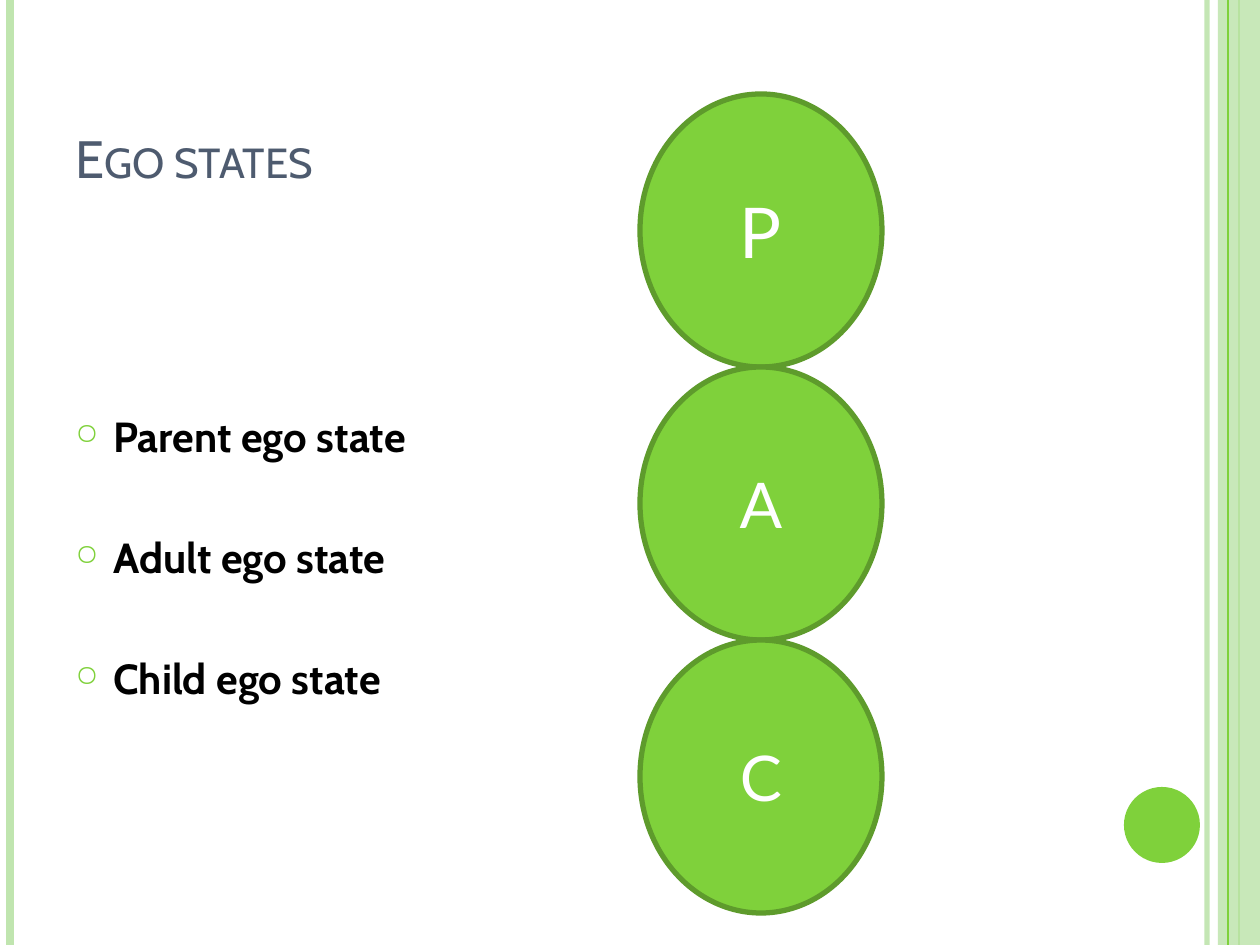
"""Build the ego states slide with its three stacked circles."""
from typing import NamedTuple, Optional

from lxml import etree
from pptx import Presentation
from pptx.dml.color import RGBColor
from pptx.enum.shapes import MSO_CONNECTOR, MSO_SHAPE
from pptx.enum.text import MSO_ANCHOR, PP_ALIGN
from pptx.oxml.ns import qn
from pptx.util import Pt

EMU_PER_PX = 914400 / 126
WIDTH, HEIGHT = 1260, 945
STRAIGHT = MSO_CONNECTOR.STRAIGHT
ELLIPSE, RECTANGLE = MSO_SHAPE.OVAL, MSO_SHAPE.RECTANGLE
TOP, MIDDLE, BOTTOM = MSO_ANCHOR.TOP, MSO_ANCHOR.MIDDLE, MSO_ANCHOR.BOTTOM
CENTER = PP_ALIGN.CENTER

GREEN, DARK_GREEN, PALE_GREEN = "7FD13B", "5E9B2C", "C0E5AF"
SLATE, BLACK, WHITE = "4E5B6F", "000000", "FFFFFF"
TITLE_FONT, CIRCLE_FONT = "Cabin", "Lato"


class Box(NamedTuple):
    """Left, top, width and height in px."""
    left: int
    top: int
    width: int
    height: int


class Stripe(NamedTuple):
    """A vertical line over the full slide height."""
    x: int
    color: str
    points: float
    opacity: int = 100


class EgoState(NamedTuple):
    """A circle letter, its size and the matching bullet."""
    letter: str
    size: int
    label: str


BACK_STRIPES = [
    Stripe(1207, PALE_GREEN, 3, 93),
    Stripe(10, PALE_GREEN, 4.5),
    Stripe(1239, GREEN, 1.5),
]
FRONT_STRIPE = Stripe(1228, GREEN, 0.75)
SIDE_BAND = Box(1218, 0, 42, HEIGHT)
CORNER_DOT = Box(1124, 787, 76, 76)
TITLE_BOX = Box(63, 38, 1029, 157)
BULLET_BOX = Box(63, 404, 560, 488)
FIRST_CIRCLE = Box(640, 94, 242, 273)
BULLET_INDENT = 38
BULLET_GAP = 40.5
EGO_STATES = [
    EgoState("P", 40, "Parent ego state"),
    EgoState("A", 36, "Adult ego state"),
    EgoState("C", 36, "Child ego state"),
]


def px(length: int) -> int:
    """Turn px into EMU."""
    return round(length * EMU_PER_PX)


def rgb(color: str) -> RGBColor:
    """Turn a hex string into a colour."""
    return RGBColor.from_string(color)


def set_opacity(properties, percent: int) -> None:
    """Set the opacity of the first colour in a shape's properties."""
    color = next(properties.iter(qn("a:srgbClr")))
    etree.SubElement(color, qn("a:alpha"), val=str(percent * 1000))


def add_stripe(slide, stripe: Stripe) -> None:
    """Draw a vertical line without a shadow."""
    x = px(stripe.x)
    connector = slide.shapes.add_connector(STRAIGHT, x, 0, x, px(HEIGHT))
    connector.line.color.rgb = rgb(stripe.color)
    connector.line.width = Pt(stripe.points)
    properties = connector._element.spPr
    if stripe.opacity < 100:
        set_opacity(properties, stripe.opacity)
    etree.SubElement(properties, qn("a:effectLst"))


def add_filled(slide, kind, box: Box, fill: str, line: Optional[str] = None):
    """Draw a filled shape, outlined when a line colour is given."""
    shape = slide.shapes.add_shape(kind, *map(px, box))
    shape.shadow.inherit = False
    shape.fill.solid()
    shape.fill.fore_color.rgb = rgb(fill)
    if line:
        shape.line.color.rgb = rgb(line)
        shape.line.width = Pt(3)
    else:
        shape.line.fill.background()
    return shape


def add_run(paragraph, text: str, size: int, font: str, color: str, bold: bool = False):
    """Add one formatted run."""
    run = paragraph.add_run()
    run.text = text
    run.font.size = Pt(size)
    run.font.name = font
    run.font.bold = bold
    run.font.color.rgb = rgb(color)
    return run


def add_text_frame(slide, box: Box, anchor):
    """Add a wrapping text box and return its frame."""
    frame = slide.shapes.add_textbox(*map(px, box)).text_frame
    frame.word_wrap = True
    frame.vertical_anchor = anchor
    return frame


def set_bullet(paragraph) -> None:
    """Give a paragraph a small green ring bullet with a hanging indent."""
    properties = paragraph._p.get_or_add_pPr()
    properties.set("marL", str(px(BULLET_INDENT)))
    properties.set("indent", str(-px(BULLET_INDENT)))
    color = etree.SubElement(properties, qn("a:buClr"))
    etree.SubElement(color, qn("a:srgbClr"), val=GREEN)
    etree.SubElement(properties, qn("a:buSzPct"), val="70000")
    etree.SubElement(properties, qn("a:buChar"), char="○")


def add_title(slide) -> None:
    """Add the small-caps title."""
    paragraph = add_text_frame(slide, TITLE_BOX, BOTTOM).paragraphs[0]
    run = add_run(paragraph, "Ego states", 30, TITLE_FONT, SLATE)
    run.font._element.set("cap", "small")


def add_bullets(slide) -> None:
    """List the ego states at equal gaps."""
    frame = add_text_frame(slide, BULLET_BOX, TOP)
    for index, state in enumerate(EGO_STATES):
        paragraph = frame.add_paragraph() if index else frame.paragraphs[0]
        paragraph.space_before = Pt(BULLET_GAP if index else 0)
        set_bullet(paragraph)
        add_run(paragraph, state.label, 24, TITLE_FONT, BLACK, bold=True)


def add_circles(slide) -> None:
    """Stack one lettered circle per ego state."""
    for index, state in enumerate(EGO_STATES):
        box = FIRST_CIRCLE._replace(top=FIRST_CIRCLE.top + index * FIRST_CIRCLE.height)
        frame = add_filled(slide, ELLIPSE, box, GREEN, DARK_GREEN).text_frame
        frame.vertical_anchor = MIDDLE
        paragraph = frame.paragraphs[0]
        paragraph.alignment = CENTER
        add_run(paragraph, state.letter, state.size, CIRCLE_FONT, WHITE)


def main() -> None:
    """Build and save the slide."""
    presentation = Presentation()
    presentation.slide_width, presentation.slide_height = px(WIDTH), px(HEIGHT)
    slide = presentation.slides.add_slide(presentation.slide_layouts[6])
    for stripe in BACK_STRIPES:
        add_stripe(slide, stripe)
    band = add_filled(slide, RECTANGLE, SIDE_BAND, PALE_GREEN)
    set_opacity(band._element.spPr, 87)
    add_stripe(slide, FRONT_STRIPE)
    add_filled(slide, ELLIPSE, CORNER_DOT, GREEN)
    add_title(slide)
    add_bullets(slide)
    add_circles(slide)
    presentation.save("out.pptx")


if __name__ == "__main__":
    main()
